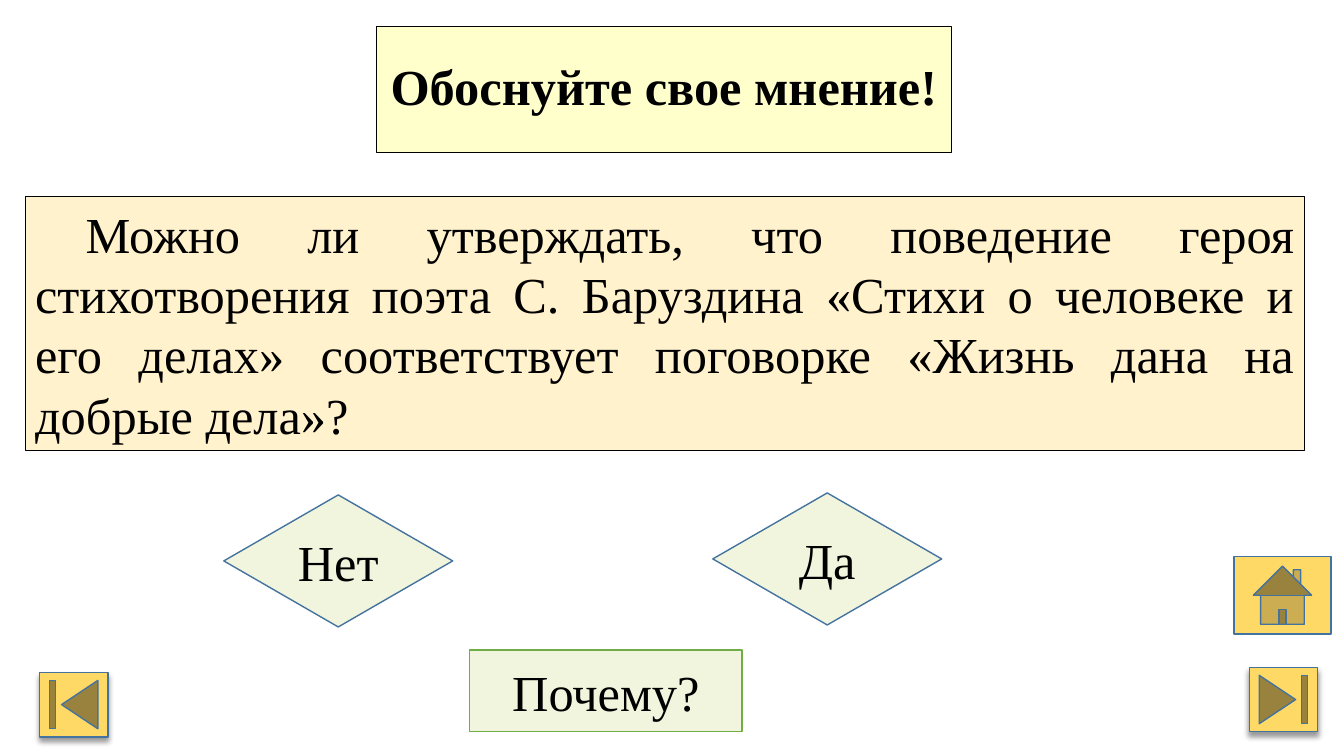
from lxml.etree import SubElement
from pptx import Presentation
from pptx.dml.color import RGBColor
from pptx.enum.shapes import MSO_SHAPE as Shape
from pptx.enum.text import MSO_ANCHOR as Anchor, MSO_AUTO_SIZE as AutoSize, PP_ALIGN as Align
from pptx.oxml.ns import qn
from pptx.util import Inches, Pt

COLORS = {
    "ink": "000000",
    "title": "FFFFCC",
    "question": "FFF2CC",
    "answer": "F2F5DD",
    "button": "FFD966",
    "blue": "43739E",
    "green": "70AD47",
}


def rgb(name):
    return RGBColor.from_string(COLORS[name])


class QuizSlide:
    font = "Times New Roman"
    size = Pt(36)

    def __init__(self, slide):
        self.slide = slide

    def panel(self, kind, box, fill, line, width=1):
        """Add a filled, outlined preset shape; box is left, top, width, height in inches."""
        panel = self.slide.shapes.add_shape(kind, *map(Inches, box))
        panel.shadow.inherit = False
        panel.fill.solid()
        panel.fill.fore_color.rgb = rgb(fill)
        panel.line.color.rgb = rgb(line)
        panel.line.width = Pt(width)
        return panel

    def label(self, panel, text, align=Align.CENTER, bold=False):
        frame = panel.text_frame
        frame.word_wrap = True
        frame.vertical_anchor = Anchor.MIDDLE
        paragraph = frame.paragraphs[0]
        paragraph.alignment = align
        run = paragraph.add_run()
        run.text = text
        run.font.name = self.font
        run.font.size = self.size
        run.font.bold = bold
        run.font.color.rgb = rgb("ink")
        return paragraph

    def title(self, text, box):
        panel = self.panel(Shape.RECTANGLE, box, "title", "ink", 0.75)
        self.label(panel, text, bold=True).line_spacing = 0.9

    def question(self, text, box):
        panel = self.panel(Shape.RECTANGLE, box, "question", "ink", 0.75)
        paragraph = self.label(panel, text, Align.JUSTIFY)
        paragraph._p.get_or_add_pPr().set("indent", str(Inches(0.5)))
        panel.text_frame.auto_size = AutoSize.SHAPE_TO_FIT_TEXT

    def answer(self, text, kind, box, line):
        self.label(self.panel(kind, box, "answer", line), text)

    def button(self, kind, box, rotation=0, raised=False):
        button = self.panel(kind, box, "button", "blue")
        button.rotation = rotation
        if raised:
            self.drop_shadow(button)

    def drop_shadow(self, button):
        effects = button.element.spPr.find(qn("a:effectLst"))
        shadow = SubElement(effects, qn("a:outerShdw"), blurRad=str(Pt(4)),
                            dist=str(Pt(3)), dir="5400000", rotWithShape="0")
        color = SubElement(shadow, qn("a:srgbClr"), val=COLORS["ink"])
        SubElement(color, qn("a:alpha"), val="40000")


def main():
    deck = Presentation()
    deck.slide_width, deck.slide_height = Inches(13.33), Inches(7.5)
    quiz = QuizSlide(deck.slides.add_slide(deck.slide_layouts[6]))

    quiz.title("Обоснуйте свое мнение!", (3.73, 0.26, 5.71, 1.25))
    quiz.question(
        "Можно ли утверждать, что поведение героя стихотворения поэта "
        "С. Баруздина «Стихи о человеке и его делах» соответствует "
        "поговорке «Жизнь дана на добрые дела»?",
        (0.25, 1.95, 12.69, 2.52))

    quiz.button(Shape.ACTION_BUTTON_END, (0.39, 6.67, 0.68, 0.64), rotation=180, raised=True)
    quiz.button(Shape.ACTION_BUTTON_HOME, (12.24, 5.52, 0.96, 0.77))
    quiz.button(Shape.ACTION_BUTTON_END, (12.39, 6.62, 0.68, 0.64), raised=True)

    for text, left, top in (("Нет", 2.22, 4.91), ("Да", 7.07, 4.89)):
        quiz.answer(text, Shape.FLOWCHART_DECISION, (left, top, 2.27, 1.31), "blue")
    quiz.answer("Почему?", Shape.RECTANGLE, (4.66, 6.45, 2.7, 0.81), "green")

    deck.save("out.pptx")


if __name__ == "__main__":
    main()
